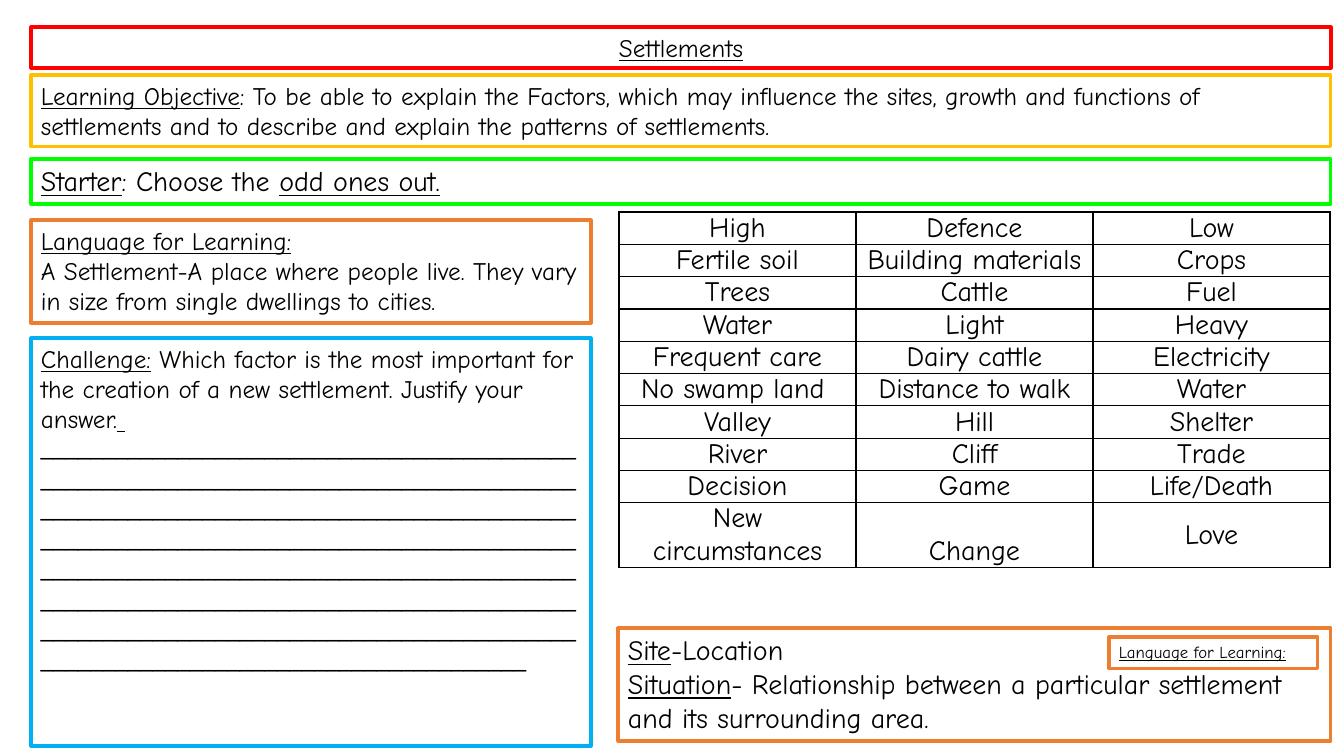
import pptx
import pptx.util
import pptx.dml.color
import pptx.enum.shapes
import pptx.enum.text
import pptx.oxml

PX = 914400 / 100.8
FONT = "Comic Neue"
RGB = pptx.dml.color.RGBColor
BLACK = RGB(0, 0, 0)
RED = RGB(0xFF, 0, 0)
GREEN = RGB(0, 0xFF, 0)
GOLD = RGB(0xFF, 0xC0, 0)
ORANGE = RGB(0xED, 0x7D, 0x31)
BLUE = RGB(0, 0xB0, 0xF0)
ALIGN = pptx.enum.text.PP_ALIGN


def px(n):
    return pptx.util.Emu(round(n * PX))


def write(p, runs, size, align):
    p.alignment = align
    p.line_spacing = 1.0
    for text, underline in runs:
        r = p.add_run()
        r.text = text
        look = {"name": FONT, "size": pptx.util.Pt(size), "underline": underline}
        for key, value in look.items():
            setattr(r.font, key, value)
        r.font.color.rgb = BLACK


prs = pptx.Presentation()
prs.slide_width, prs.slide_height = px(1344), px(756)
s = prs.slides.add_slide(prs.slide_layouts[5])

boxes = [
    (31, 27, 1300, 41, RED, 18, [[("Settlements", True)]]),
    (31, 159, 1300, 45, GREEN, 20, [
        [("Starter", True), (": Choose the ", False), ("odd ones out.", True)]]),
    (31, 75, 1300, 72, GOLD, 18, [
        [("Learning Objective", True),
         (": To be able to explain the Factors, which may influence the sites, growth and "
          "functions of settlements and to describe and explain the patterns of settlements.", False)]]),
    (31, 220, 560, 103, ORANGE, 18, [
        [("Language for Learning:", True)],
        [("A Settlement-A place where people live. They vary in size from single dwellings to cities.", False)]]),
    (31, 338, 560, 408, BLUE, 18, [
        [("Challenge:", True),
         (" Which factor is the most important for the creation of a new settlement. "
          "Justify your answer.", False), (" ", True)],
        [("_" * 340, False)]]),
    (618, 628, 713, 113, ORANGE, 20, [
        [("Site", True), ("-Location", False)],
        [("Situation", True),
         ("- Relationship between a particular settlement and its surrounding area.", False)]]),
    (1109, 637, 209, 32, ORANGE, 12, [[("Language for Learning:", True)]]),
]

for i, (x, y, w, h, color, size, paragraphs) in enumerate(boxes):
    if i == 0:
        sp = s.shapes.title
    else:
        sp = s.shapes.add_shape(pptx.enum.shapes.MSO_SHAPE.RECTANGLE, 0, 0, px(w), px(h))
        sp.shadow.inherit = False
    for key, value in {"left": x, "top": y, "width": w, "height": h}.items():
        setattr(sp, key, px(value))
    sp.fill.background()
    sp.line.color.rgb = color
    sp.line.width = pptx.util.Pt(2.25)
    tf = sp.text_frame
    frame = {
        "word_wrap": True,
        "auto_size": pptx.enum.text.MSO_AUTO_SIZE.NONE,
        "vertical_anchor": pptx.enum.text.MSO_ANCHOR.TOP,
    }
    for key, value in frame.items():
        setattr(tf, key, value)
    for j, runs in enumerate(paragraphs):
        p = tf.add_paragraph() if j else tf.paragraphs[0]
        write(p, runs, size, ALIGN.LEFT if i else ALIGN.CENTER)

words = [
    ("High", "Defence", "Low"),
    ("Fertile soil", "Building materials", "Crops"),
    ("Trees", "Cattle", "Fuel"),
    ("Water", "Light", "Heavy"),
    ("Frequent care", "Dairy cattle", "Electricity"),
    ("No swamp land ", "Distance to walk", "Water"),
    ("Valley", "Hill", "Shelter"),
    ("River", "Cliff", "Trade"),
    ("Decision", "Game", "Life/Death"),
    ("New circumstances", "Change", "Love"),
]
table = s.shapes.add_table(len(words), 3, px(619), px(212), px(711), px(331)).table
table.first_row = False
table.horz_banding = False
for col in table.columns:
    col.width = px(237)
for i, row in enumerate(words):
    table.rows[i].height = px(52 if i == len(words) - 1 else 31)
    for j, word in enumerate(row):
        cell = table.cell(i, j)
        margins = {"margin_left": 7, "margin_right": 7, "margin_top": 0, "margin_bottom": 0}
        for key, value in margins.items():
            setattr(cell, key, px(value))
        cell.vertical_anchor = pptx.enum.text.MSO_ANCHOR.MIDDLE
        p = cell.text_frame.paragraphs[0]
        write(p, [(word, False)], 20, ALIGN.CENTER)
        if word == "Change":
            p.line_spacing = 2.0
        tcPr = cell._tc.get_or_add_tcPr()
        for side in "LRTB":
            tcPr.append(pptx.oxml.parse_xml(
                f'<a:ln{side} xmlns:a="http://schemas.openxmlformats.org/drawingml/2006/main" w="12700">'
                f'<a:solidFill><a:srgbClr val="{BLACK}"/></a:solidFill></a:ln{side}>'))
        cell.fill.background()

prs.save("out.pptx")
